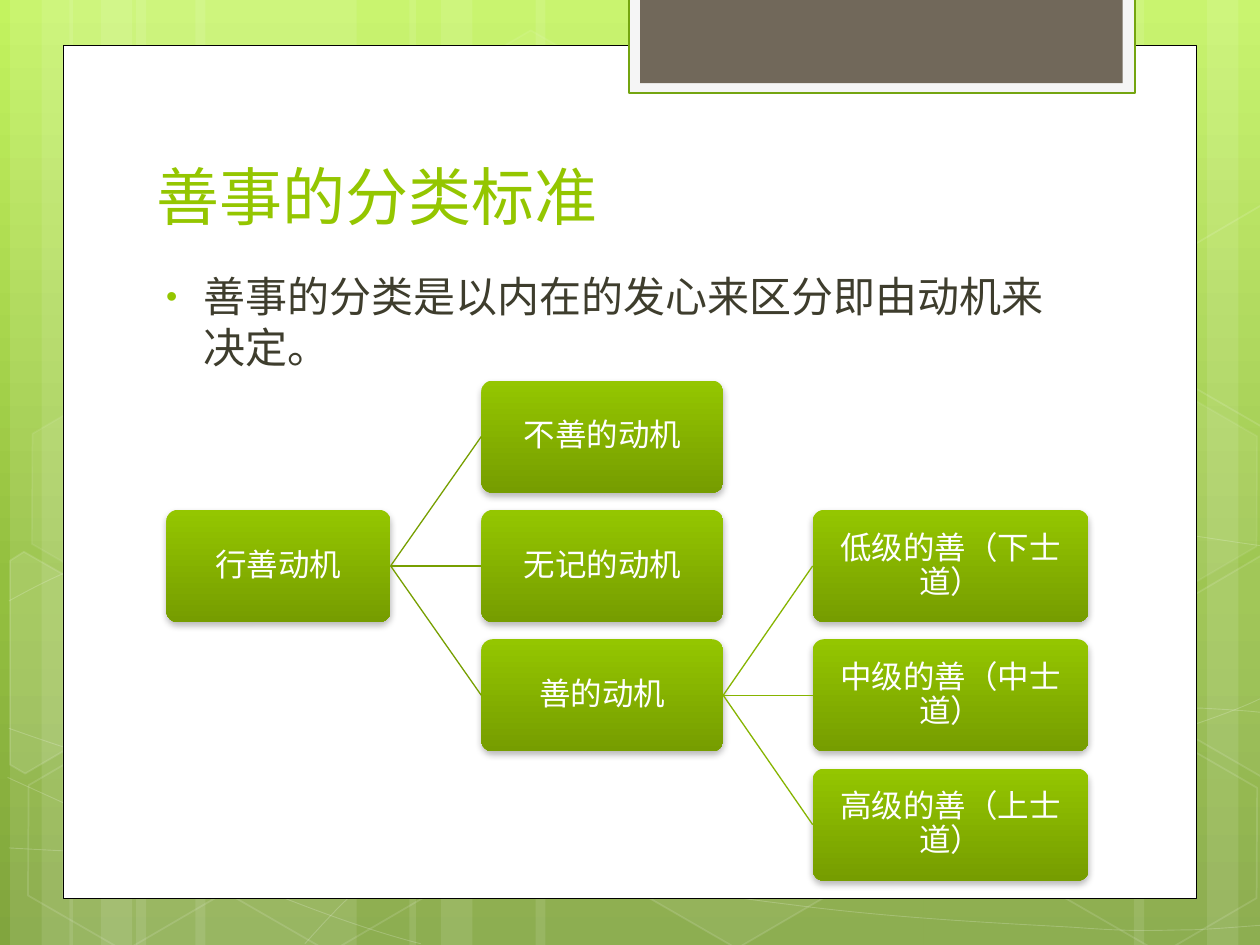
from dataclasses import dataclass
from typing import Optional

import lxml.etree
import pptx
import pptx.dml.color
import pptx.enum.shapes
import pptx.enum.text
import pptx.oxml.ns
import pptx.shapes.autoshape
import pptx.shapes.base
import pptx.slide
import pptx.text.text
import pptx.util

Inches = pptx.util.Inches
Pt = pptx.util.Pt
RGBColor = pptx.dml.color.RGBColor
Shapes = pptx.enum.shapes.MSO_SHAPE
Anchor = pptx.enum.text.MSO_ANCHOR
Align = pptx.enum.text.PP_ALIGN
qn = pptx.oxml.ns.qn

FONT = "League Spartan"
WHITE = RGBColor(0xFF, 0xFF, 0xFF)
BLACK = RGBColor(0x00, 0x00, 0x00)
GREEN = RGBColor(0x94, 0xC6, 0x00)
DEEP_GREEN = RGBColor(0x76, 0x9D, 0x00)
FIRST_LINK = RGBColor(0x77, 0x9F, 0x00)
SECOND_LINK = RGBColor(0x86, 0xB4, 0x00)
TAB_EDGE = RGBColor(0x74, 0xA5, 0x10)
TAB_RIM = RGBColor(0xF5, 0xF5, 0xF5)
TAB_FILL = RGBColor(0x71, 0x68, 0x5A)
BODY_TEXT = RGBColor(0x3E, 0x3D, 0x2D)
SKY = [(0, RGBColor(0xC3, 0xF3, 0x5F)), (62, RGBColor(0x93, 0xBF, 0x3F)),
       (100, RGBColor(0x81, 0xA5, 0x3E))]

Point = tuple[float, float]


@dataclass
class Paint:
    fill: Optional[RGBColor] = None
    fill_alpha: int = 100
    line: Optional[RGBColor] = None
    line_alpha: int = 100
    width: float = 1


@dataclass
class Hexagon:
    left: float
    top: float
    fill_alpha: int
    line_alpha: int


@dataclass
class Outline:
    points: list[Point]
    fill_alpha: int


@dataclass
class Node:
    text: str
    column: int
    row: int
    parent: Optional[int] = None


STRIPE_SET = [(1.08, 1.75), (0.08, 0.5), (0.33, 0.83)]
STRIPES = [(left + shift, width) for shift in (0, 0.47) for left, width in STRIPE_SET] + [
    (7.33, 1.75), (9.58, 0.5), (9, 0.83), (4.25, 3.08), (3.25, 0.5), (3.5, 0.83)]

CURVES: list[list[Point]] = [
    [(0.07, 6.73), (0.61, 6.76), (1.15, 6.79), (1.9, 6.78), (2.65, 6.77), (3.58, 6.75),
     (4.58, 6.65), (5.58, 6.55), (7, 6.36), (7.92, 6.17), (8.83, 5.98), (9.77, 5.68), (10.07, 5.51)],
    [(0.07, 4.77), (0.36, 4.61), (0.65, 4.46), (1.21, 4.31), (1.78, 4.16), (2.59, 3.94),
     (3.47, 3.87), (4.36, 3.8), (5.44, 3.79), (6.54, 3.87), (7.64, 3.95), (9.47, 4.26), (10.07, 4.34)],
    [(0.06, 6.17), (1.27, 6.72), (2.47, 7.27), (3.34, 7.49)],
    [(0.07, 5.78), (0.38, 5.89), (0.7, 6), (1.28, 6.16), (1.86, 6.31), (2.73, 6.56),
     (3.57, 6.73), (4.4, 6.9), (5.45, 7.08), (6.28, 7.18), (7.11, 7.29), (8, 7.33),
     (8.53, 7.36), (9.05, 7.4), (9.19, 7.38), (9.45, 7.38), (9.71, 7.37), (9.89, 7.35), (10.07, 7.34)],
    [(2.42, 7.49), (2.6, 7.29), (2.78, 7.09), (3.02, 6.91), (3.26, 6.73), (3.6, 6.53),
     (3.88, 6.39), (4.16, 6.25), (4.33, 6.19), (4.7, 6.09), (5.06, 5.99), (5.73, 5.85),
     (6.08, 5.78), (6.44, 5.71), (6.49, 5.71), (6.8, 5.69), (7.11, 5.66), (7.6, 5.63),
     (7.94, 5.62), (8.29, 5.61), (8.86, 5.62), (8.86, 5.62), (8.86, 5.62), (9.53, 5.62),
     (9.53, 5.62), (9.71, 5.63), (9.88, 5.64), (9.97, 5.65), (10.06, 5.66), (10.03, 5.65), (10.06, 5.66)],
]
HEXAGONS = [
    Hexagon(3.34, 0.36, 4, 8), Hexagon(4.97, 5.89, 6, 12), Hexagon(0.11, 5.91, 0, 12),
    Hexagon(0.14, 3.12, 7, 8), Hexagon(1.74, 5.92, 0, 12), Hexagon(7.53, 4.53, 10, 12),
    Hexagon(8.34, 5.93, 0, 12), Hexagon(8.34, 3.14, 7, 8),
]
RIGHT_EDGE = [(9.26, 4.85), (10.01, 4.41), (10.09, 4.46), (10.09, 6.13), (10.02, 6.17), (9.26, 5.73)]
CUT_HEXAGONS = [
    Outline([(0.08, 4.45), (0.19, 4.38), (0.96, 4.82), (0.95, 5.7), (0.2, 6.14), (0.08, 6.07)], 10),
    Outline(RIGHT_EDGE, 4),
    Outline([(x, y - 2.78) for x, y in RIGHT_EDGE], 0),
]

COLUMNS = [(1.32, 1.78), (3.82, 1.92), (6.45, 2.19)]
NODE_HEIGHT = 0.89
ROW_TOP = 3.02
ROW_PITCH = (6.1 - ROW_TOP) / 3
LINK_COLORS = [FIRST_LINK, SECOND_LINK]
NODES = [
    Node("行善动机", 0, 1),
    Node("不善的动机", 1, 0, 0),
    Node("无记的动机", 1, 1, 0),
    Node("善的动机", 1, 2, 0),
    Node("低级的善（下士道）", 2, 1, 3),
    Node("中级的善（中士道）", 2, 2, 3),
    Node("高级的善（上士道）", 2, 3, 3),
]


def add_xml(parent: lxml.etree._Element, tag: str, **values: object) -> lxml.etree._Element:
    return lxml.etree.SubElement(parent, qn(tag), {key: str(value) for key, value in values.items()})


def set_gradient(fill, element: lxml.etree._Element, stops: list[tuple[int, RGBColor]]) -> None:
    fill.gradient()
    fill.gradient_angle = 270
    stop_list = element.find(".//" + qn("a:gsLst"))
    for stop in list(stop_list):
        stop_list.remove(stop)
    for position, color in stops:
        add_xml(add_xml(stop_list, "a:gs", pos=position * 1000), "a:srgbClr", val=color)


def set_color(fill, element: lxml.etree._Element, route: str, color: Optional[RGBColor], alpha: int) -> None:
    if color is None or alpha == 0:
        fill.background()
        return
    fill.solid()
    fill.fore_color.rgb = color
    if alpha < 100:
        add_xml(element.find(".//" + qn("p:spPr") + route + "/" + qn("a:solidFill") + "/" + qn("a:srgbClr")),
                "a:alpha", val=alpha * 1000)


def apply_paint(shape: pptx.shapes.autoshape.Shape, paint: Paint) -> None:
    shape.shadow.inherit = False
    set_color(shape.fill, shape.element, "", paint.fill, paint.fill_alpha)
    set_color(shape.line.fill, shape.element, "/" + qn("a:ln"), paint.line, paint.line_alpha)
    if paint.line is not None:
        shape.line.width = Pt(paint.width)


def add_box(page: pptx.slide.Slide, kind: Shapes, left: float, top: float, width: float,
            height: float, paint: Paint) -> pptx.shapes.autoshape.Shape:
    box = page.shapes.add_shape(kind, Inches(left), Inches(top), Inches(width), Inches(height))
    apply_paint(box, paint)
    return box


def add_outline(page: pptx.slide.Slide, points: list[Point], closed: bool,
                paint: Paint) -> pptx.shapes.autoshape.Shape:
    corners = [(Inches(x), Inches(y)) for x, y in points]
    builder = page.shapes.build_freeform(*corners[0])
    builder.add_line_segments(corners[1:], close=closed)
    outline = builder.convert_to_shape()
    apply_paint(outline, paint)
    return outline


def add_curve(page: pptx.slide.Slide, controls: list[Point], paint: Paint) -> None:
    outline = add_outline(page, controls, False, paint)
    lines = outline.element.findall(".//" + qn("a:lnTo"))
    route = lines[0].getparent()
    for start in range(0, len(lines), 3):
        bezier = add_xml(route, "a:cubicBezTo")
        for line in lines[start:start + 3]:
            bezier.append(line[0])
            route.remove(line)


def write(frame: pptx.text.text.TextFrame, text: str, size: float, color: RGBColor,
          anchor: Anchor, align: Align = Align.LEFT) -> pptx.text.text._Paragraph:
    frame.word_wrap = True
    frame.vertical_anchor = anchor
    para = frame.paragraphs[0]
    para.text = text
    para.alignment = align
    para.font.name = FONT
    para.font.size = Pt(size)
    para.font.color.rgb = color
    return para


def add_bullet(para: pptx.text.text._Paragraph) -> None:
    properties = para._p.get_or_add_pPr()
    properties.set("marL", str(Inches(0.38)))
    properties.set("indent", str(Inches(-0.3)))
    default_font = properties.find(qn("a:defRPr"))
    properties.remove(default_font)
    add_xml(add_xml(properties, "a:buClr"), "a:srgbClr", val=GREEN)
    add_xml(properties, "a:buSzPct", val=76000)
    add_xml(properties, "a:buFont", typeface="Arial")
    add_xml(properties, "a:buChar", char="•")
    properties.append(default_font)


def add_node(page: pptx.slide.Slide, node: Node) -> pptx.shapes.autoshape.Shape:
    left, width = COLUMNS[node.column]
    box = add_box(page, Shapes.ROUNDED_RECTANGLE, left, ROW_TOP + node.row * ROW_PITCH,
                  width, NODE_HEIGHT, Paint())
    box.adjustments[0] = 0.1
    set_gradient(box.fill, box.element, [(0, GREEN), (100, DEEP_GREEN)])
    shadow = add_xml(box.element.find(".//" + qn("a:effectLst")), "a:outerShdw",
                     blurRad=Pt(4), dist=Pt(2), dir=5400000, rotWithShape=0)
    add_xml(add_xml(shadow, "a:srgbClr", val=BLACK), "a:alpha", val=28000)
    frame = box.text_frame
    frame.margin_left = frame.margin_right = frame.margin_top = frame.margin_bottom = Inches(0.01)
    write(frame, node.text, 18, WHITE, Anchor.MIDDLE, Align.CENTER).line_spacing = 0.9
    return box


def add_link(page: pptx.slide.Slide, parent: pptx.shapes.base.BaseShape,
             child: pptx.shapes.base.BaseShape, color: RGBColor) -> None:
    link = page.shapes.add_connector(pptx.enum.shapes.MSO_CONNECTOR.STRAIGHT, 0, 0, 0, 0)
    link.begin_connect(parent, 3)
    link.end_connect(child, 1)
    link.line.color.rgb = color
    link.line.width = Pt(0.75)
    add_xml(link.element.spPr, "a:effectLst")


def add_backdrop(page: pptx.slide.Slide) -> None:
    set_gradient(page.background.fill, page.element, SKY)
    for left, width in STRIPES:
        add_box(page, Shapes.RECTANGLE, left, 0, width, 7.5, Paint(WHITE, 10))
    for controls in CURVES:
        add_curve(page, controls, Paint(line=WHITE, line_alpha=20, width=0.5))
    for hexagon in HEXAGONS:
        box = add_box(page, Shapes.HEXAGON, hexagon.left, hexagon.top, 1.75, 1.52,
                      Paint(WHITE, hexagon.fill_alpha, WHITE, hexagon.line_alpha))
        box.adjustments[0] = 0.285
        box.rotation = 30
    for outline in CUT_HEXAGONS:
        add_outline(page, outline.points, True, Paint(WHITE, outline.fill_alpha, WHITE, 12))
    add_box(page, Shapes.RECTANGLE, 0.5, 0.36, 9, 6.77, Paint(WHITE, line=BLACK, width=0.5))
    add_box(page, Shapes.RECTANGLE, 4.99, -0.02, 4.02, 0.76, Paint(TAB_RIM, line=TAB_EDGE, width=1.25))
    add_box(page, Shapes.RECTANGLE, 5.08, -0.02, 3.83, 0.68, Paint(TAB_FILL))


def main() -> None:
    deck = pptx.Presentation()
    deck.slide_width, deck.slide_height = Inches(10), Inches(7.5)
    page = deck.slides.add_slide(deck.slide_layouts[6])
    add_backdrop(page)
    title = page.shapes.add_textbox(Inches(1.14), Inches(1.12), Inches(7.68), Inches(0.78))
    write(title.text_frame, "善事的分类标准", 36, GREEN, Anchor.BOTTOM)
    body = page.shapes.add_textbox(Inches(1.14), Inches(2.1), Inches(7.41), Inches(0.92))
    para = write(body.text_frame, "善事的分类是以内在的发心来区分即由动机来决定。", 24, BODY_TEXT, Anchor.TOP)
    para.space_before = Pt(4.8)
    add_bullet(para)
    boxes = []
    for node in NODES:
        boxes.append(add_node(page, node))
        if node.parent is not None:
            add_link(page, boxes[node.parent], boxes[-1], LINK_COLORS[node.column - 1])
    deck.save("out.pptx")


if __name__ == "__main__":
    main()
